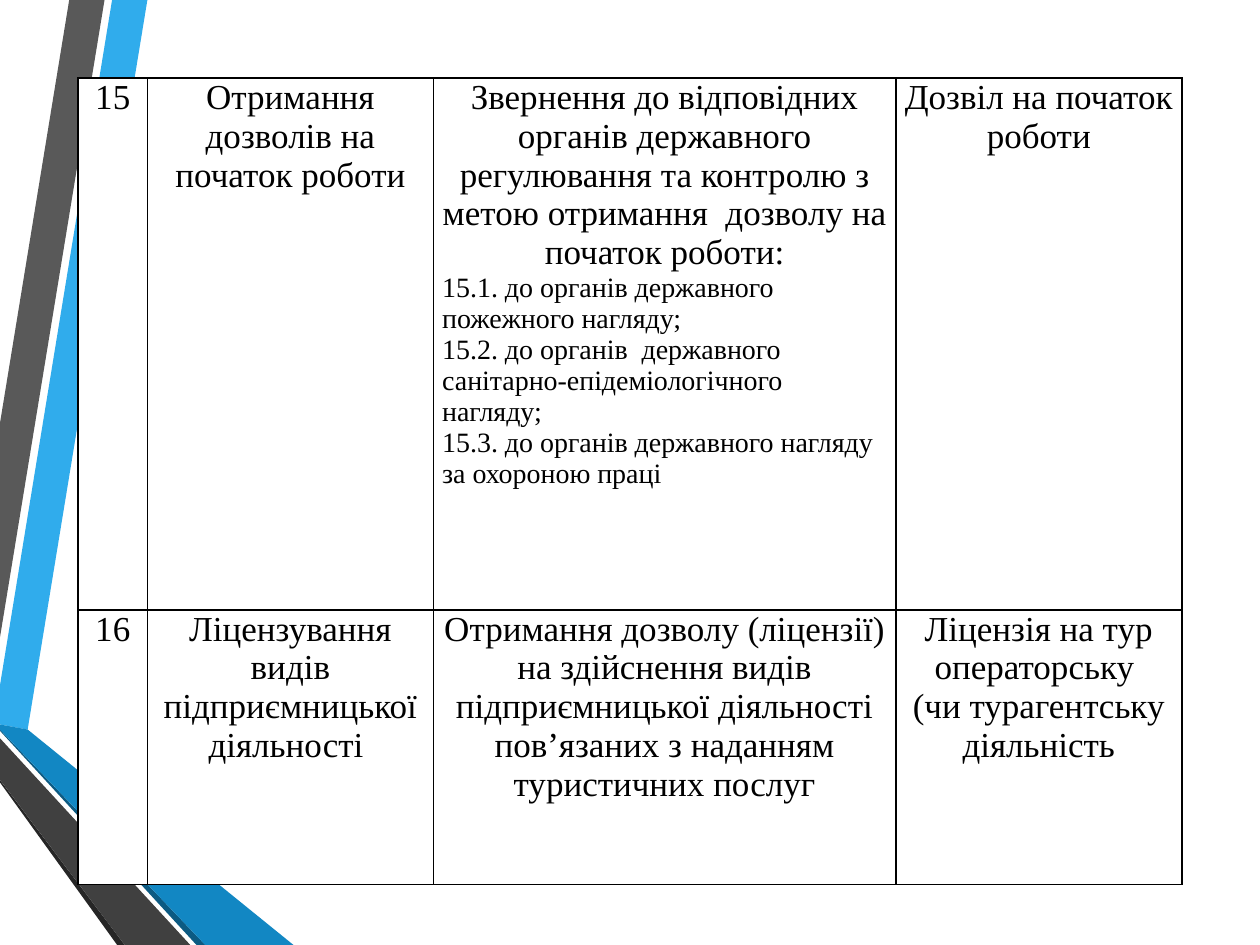
from lxml import etree
from pptx import Presentation
from pptx import util as u
from pptx.dml.color import RGBColor
from pptx.enum import text
from pptx.oxml import ns

HUES = {
    "sky": "30ACEC", "grey": "595959", "black": "262626", "navy": "0C5A82",
    "blue": "1287C3", "dark": "404040", "paper": "FFFFFF", "ink": "000000",
}
FONT = "Times New Roman"


def paint(fill, hue):
    fill.solid()
    fill.fore_color.rgb = RGBColor.from_string(HUES[hue])


def edge(cell, side):
    props = cell._tc.get_or_add_tcPr()
    line = etree.SubElement(props, ns.qn(f"a:{side}"), w=str(u.Pt(1)))
    fill = etree.SubElement(line, ns.qn("a:solidFill"))
    etree.SubElement(fill, ns.qn("a:srgbClr"), val=HUES["ink"])


deck = Presentation()
deck.slide_width, deck.slide_height = u.Inches(10), u.Inches(7.5)
slide = deck.slides.add_slide(deck.slide_layouts[6])

# Folded ribbons on the left
ribbons = [
    ("sky", [(0, 5.44), (0, 5.75), (0.22, 5.79), (1.17, 0), (0.89, 0)]),
    ("grey", [(0.83, 0), (0.55, 0), (0, 3.36), (0, 5.06)]),
    ("black", [(0, 6.19), (0, 6.21), (0.93, 7.5), (0.99, 7.5)]),
    ("navy", [(0, 5.79), (0, 5.8), (1.56, 7.5), (1.63, 7.5)]),
    ("blue", [(0, 5.79), (1.63, 7.5), (2.33, 7.5), (0.22, 5.79), (0, 5.75)]),
    ("dark", [(0, 6.19), (0.99, 7.5), (1.51, 7.5), (0, 5.86)]),
]
for hue, spots in ribbons:
    first, *rest = [(u.Inches(x), u.Inches(y)) for x, y in spots]
    pen = slide.shapes.build_freeform(*first)
    pen.add_line_segments(rest, close=True)
    shape = pen.convert_to_shape()
    shape.shadow.inherit = False
    shape.line.fill.background()
    paint(shape.fill, hue)

# Table text: centred headings, then a smaller list on the left
rows = [
    [
        ["15"],
        ["Отримання дозволів на початок роботи"],
        ["Звернення до відповідних органів державного регулювання та контролю "
         "з метою отримання  дозволу на початок роботи:",
         "15.1. до органів державного пожежного нагляду;",
         "15.2. до органів  державного санітарно-епідеміологічного нагляду;",
         "15.3. до органів державного нагляду за охороною праці"],
        ["Дозвіл на початок роботи"],
    ],
    [
        ["16"],
        ["Ліцензування видів підприємницької діяльності "],
        ["Отримання дозволу (ліцензії) на здійснення видів підприємницької "
         "діяльності пов’язаних з наданням туристичних послуг"],
        ["Ліцензія на тур операторську ", "(чи турагентську діяльність"],
    ],
]
widths = [0.55, 2.27, 3.67, 2.27]
heights = [4.22, 2.18]

# Table grid
frame = slide.shapes.add_table(
    len(heights), len(widths), u.Inches(0.62), u.Inches(0.62),
    u.Inches(sum(widths)), u.Inches(sum(heights)))
table = frame.table
table.first_row = table.horz_banding = False
for col, width in zip(table.columns, widths):
    col.width = u.Inches(width)
for row, height in zip(table.rows, heights):
    row.height = u.Inches(height)

# Table cells
inset = {
    "margin_left": u.Inches(0.07), "margin_right": u.Inches(0.07),
    "margin_top": 0, "margin_bottom": 0,
    "vertical_anchor": text.MSO_ANCHOR.TOP,
}
for r, row in enumerate(rows):
    for c, lines in enumerate(row):
        cell = table.cell(r, c)
        for key, value in inset.items():
            setattr(cell, key, value)
        for side in ("lnL", "lnR", "lnT", "lnB"):
            edge(cell, side)
        paint(cell.fill, "paper")
        cell.text = "\n".join(lines)
        for para in cell.text_frame.paragraphs:
            item = para.text.startswith("15.")
            para.alignment = text.PP_ALIGN.LEFT if item else text.PP_ALIGN.CENTER
            font = para.runs[0].font
            font.name = FONT
            font.size = u.Pt(16 if item else 20)
            font.color.rgb = RGBColor.from_string(HUES["ink"])

deck.save("out.pptx")
